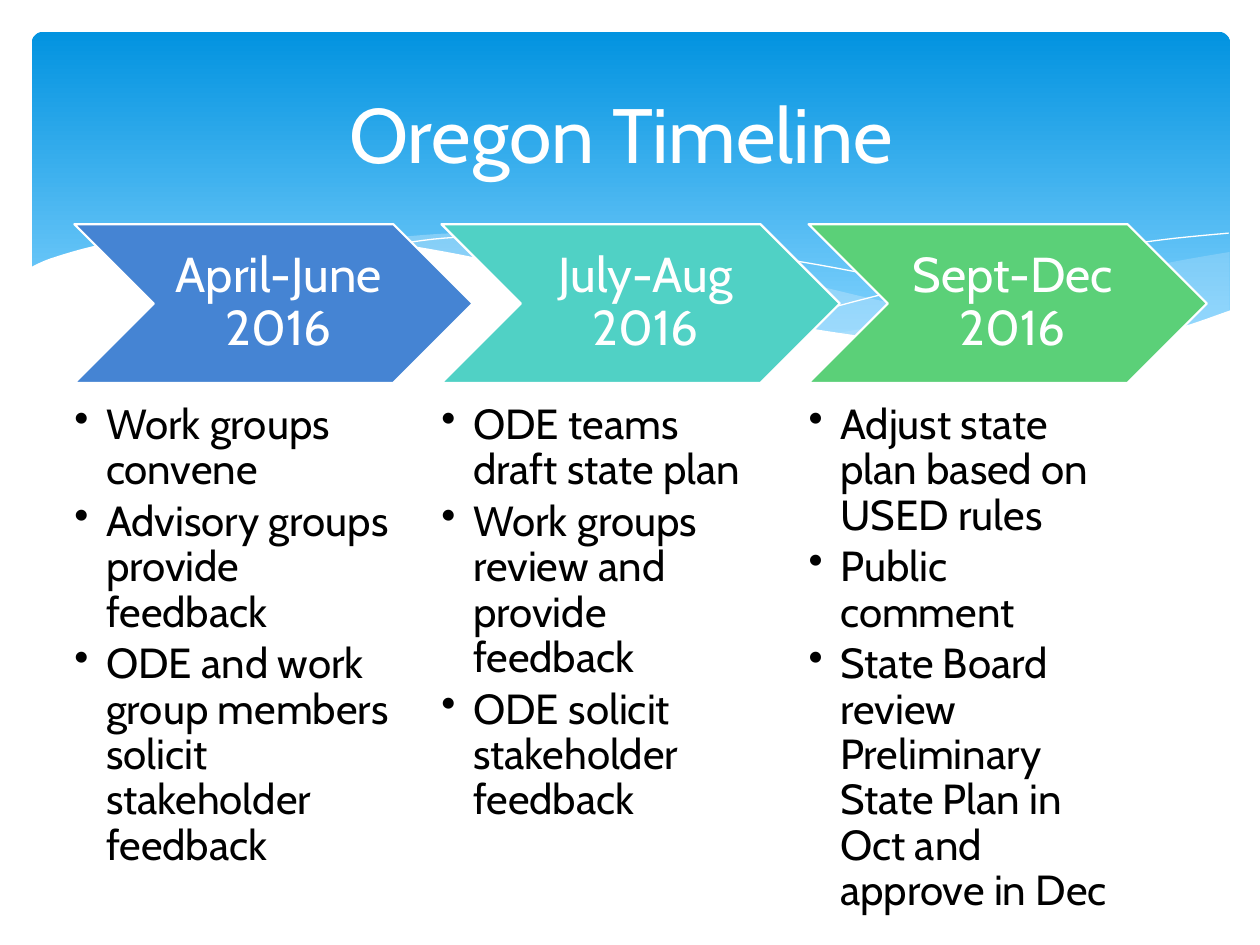
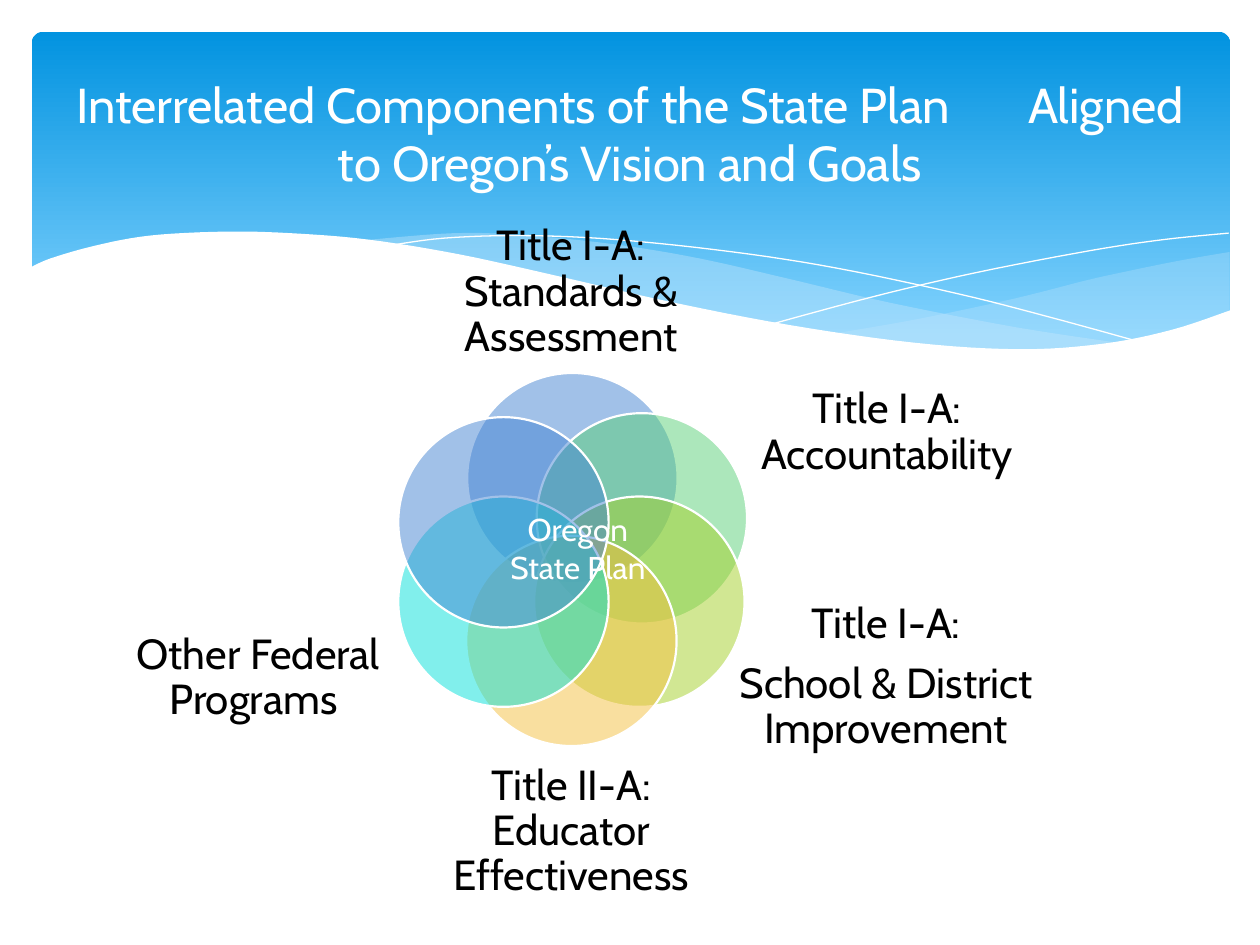
from pptx import Presentation
from pptx.dml.color import RGBColor
from pptx.enum.shapes import MSO_SHAPE
from pptx.enum.text import MSO_ANCHOR, PP_ALIGN
from pptx.oxml.ns import qn
from pptx.util import Cm, Pt
from lxml.etree import SubElement

FONT = "Cabin"
WHITE, BLACK = "FFFFFF", "000000"
SKY_TOP, SKY_BOTTOM, MIST = "0293E0", "83D3FE", "C6E7FC"
BLUE, TEAL, GREEN = "4584D3", "50D1C5", "5BD078"
LIME, AMBER, AQUA = "A5D028", "F5C040", "05E0DB"

# Wave knots in cm; each wave is a smooth curve through them.
SWELL_TOP = [(24.79, 5.08), (23.75, 5.26), (22.63, 5.49), (21.87, 5.66),
             (20.45, 6.02), (18.52, 6.43), (16.79, 6.73)]
SWELL_BOTTOM = [(16.79, 6.73), (17.91, 6.88), (19.23, 7.01), (20.68, 7.06),
                (21.92, 6.99), (22.99, 6.83), (23.93, 6.58), (24.79, 6.27)]
RIBBON_TOP = [(22.68, 6.93), (20.5, 6.6), (17.93, 6.1), (15.98, 5.64),
              (14.1, 5.21), (12.42, 4.93), (10.67, 4.75), (9.17, 4.7),
              (7.26, 4.85)]
RIBBON_BOTTOM = [(7.26, 4.85), (8.69, 5.05), (10.26, 5.36), (11.4, 5.64),
                 (13.46, 6.1), (15.27, 6.48), (17.27, 6.81), (19, 7.01),
                 (20.5, 7.06), (22.68, 6.93)]
FALLING_LINE = [(7.85, 4.95), (8.97, 4.8), (10.57, 4.75), (12.42, 4.83),
                (14.78, 5.08), (16.89, 5.41), (19.3, 5.92), (21.11, 6.38),
                (23.04, 6.91)]
RISING_LINE = [(15.57, 6.53), (17.65, 5.97), (19.71, 5.49), (22, 5.05),
               (23.47, 4.83), (24.77, 4.7)]
FRONT_WAVE = [(24.82, 6.25), (23.62, 6.65), (22.23, 6.93), (20.55, 7.04),
              (18.44, 6.91), (15.9, 6.55), (13.44, 6.07), (11.35, 5.59),
              (9.27, 5.13), (7.42, 4.83), (5.84, 4.7), (4.5, 4.67),
              (3.02, 4.75), (1.93, 4.95), (1.02, 5.21), (0.58, 5.41)]
FRONT_BASE = [(0.58, 8.36), (24.82, 8.36)]

PHASES = [
    ("April-June 2016", BLUE,
     ["Work groups convene",
      "Advisory groups provide feedback",
      "ODE and work group members solicit stakeholder feedback"]),
    ("July-Aug 2016", TEAL,
     ["ODE teams draft state plan",
      "Work groups review and provide feedback",
      "ODE solicit stakeholder feedback"]),
    ("Sept-Dec 2016", GREEN,
     ["Adjust state plan based on USED rules",
      "Public comment",
      "State Board review Preliminary State Plan in Oct and approve in Dec"]),
]

# Circle corner, colour, label box, label paragraphs
COMPONENTS = [
    ((9.42, 7.52), BLUE, (8.86, 4.45, 5.31, 2.9),
     ["Title I-A: Standards & Assessment"]),
    ((10.82, 8.33), GREEN, (14.66, 7.14, 6.45, 3.18),
     ["Title I-A: Accountability"]),
    ((10.77, 10.01), LIME, (13, 11.89, 9.73, 3.53),
     ["Title I-A:", "School & District Improvement"]),
    ((9.4, 10.8), AMBER, (8.86, 15.32, 5.31, 2.9),
     ["Title II-A: Educator Effectiveness"]),
    ((8.03, 10.01), AQUA, (2.69, 11.91, 5.03, 3.53),
     ["Other Federal Programs "]),
    ((8.03, 8.41), BLUE, None, []),
]


def rgb(code):
    return RGBColor.from_string(code)


def smooth(knots, steps=6):
    """Return points of a Catmull-Rom curve through the knots."""
    ends = [knots[0], *knots, knots[-1]]
    points = [knots[0]]
    for a, b, c, d in zip(ends, ends[1:], ends[2:], ends[3:]):
        for i in range(1, steps + 1):
            t = i / steps
            points.append(tuple(
                (2 * q + (s - p) * t + (2 * p - 5 * q + 4 * s - u) * t ** 2
                 + (3 * q - p - 3 * s + u) * t ** 3) / 2
                for p, q, s, u in zip(a, b, c, d)))
    return points


class Deck:
    def __init__(self):
        self.prs = Presentation()
        self.prs.slide_width, self.prs.slide_height = Cm(25.4), Cm(19.05)
        self.s = None

    def slide(self, title, size):
        self.s = self.prs.slides.add_slide(self.prs.slide_layouts[6])
        self.header()
        return self.text((1.27, 0.94, 22.86, 3.48), [title], size, WHITE,
                         anchor=MSO_ANCHOR.MIDDLE, insets=(0.25, 0.13, 0.25, 0.13))

    def header(self):
        band = self.shape(MSO_SHAPE.ROUNDED_RECTANGLE, (0.64, 0.64, 24.16, 6.86))
        band.adjustments[0] = 0.034
        band.fill.gradient()
        band.fill.gradient_angle = 270
        stops = band.fill.gradient_stops
        for stop, color, position in zip(stops, (SKY_TOP, SKY_BOTTOM), (0, 0.9)):
            stop.color.rgb = rgb(color)
            stop.position = position
        self.wave(smooth(SWELL_TOP) + smooth(SWELL_BOTTOM), MIST, 29)
        self.wave(smooth(RIBBON_TOP) + smooth(RIBBON_BOTTOM), MIST, 40)
        self.wave(smooth(FALLING_LINE))
        self.wave(smooth(RISING_LINE))
        self.wave(smooth(FRONT_WAVE) + FRONT_BASE, WHITE)

    def wave(self, points, fill=None, alpha=100):
        """Draw a filled wave, or a white hairline when there is no fill."""
        start, *rest = [(Cm(x), Cm(y)) for x, y in points]
        builder = self.s.shapes.build_freeform(*start)
        builder.add_line_segments(rest, close=fill is not None)
        sp = builder.convert_to_shape()
        self.paint(sp, fill, alpha, None if fill else WHITE, 0)

    def paint(self, sp, fill=None, alpha=100, line=None, width=1.25):
        sp.shadow.inherit = False
        if fill:
            sp.fill.solid()
            sp.fill.fore_color.rgb = rgb(fill)
            if alpha < 100:
                color = sp._element.spPr.find(qn("a:solidFill"))[0]
                SubElement(color, qn("a:alpha"), val=str(alpha * 1000))
        else:
            sp.fill.background()
        if line:
            sp.line.color.rgb = rgb(line)
            sp.line.width = Pt(width)
        else:
            sp.line.fill.background()

    def shape(self, kind, box, **style):
        sp = self.s.shapes.add_shape(kind, *map(Cm, box))
        self.paint(sp, **style)
        return sp

    def text(self, box, paragraphs, size, color=BLACK, **style):
        sp = self.s.shapes.add_textbox(*map(Cm, box))
        self.fill_frame(sp.text_frame, paragraphs, size, color, **style)
        return sp.text_frame

    def fill_frame(self, tf, paragraphs, size, color, anchor=MSO_ANCHOR.TOP,
                   insets=(0, 0, 0, 0), spacing=1, after=0, bullet=False):
        """Fill a frame; a paragraph is a string or a list of run strings."""
        tf.word_wrap = True
        tf.vertical_anchor = anchor
        (tf.margin_left, tf.margin_top,
         tf.margin_right, tf.margin_bottom) = map(Cm, insets)
        for i, runs in enumerate(paragraphs):
            p = tf.add_paragraph() if i else tf.paragraphs[0]
            p.alignment = PP_ALIGN.LEFT if bullet else PP_ALIGN.CENTER
            p.line_spacing = spacing
            p.space_after = Pt(size * after)
            if bullet:
                pPr = p._p.get_or_add_pPr()
                pPr.set("marL", str(Cm(0.64)))
                pPr.set("indent", str(Cm(-0.64)))
                SubElement(pPr, qn("a:buChar"), char="•")
            for words in [runs] if isinstance(runs, str) else runs:
                r = p.add_run()
                r.text = words
                r.font.name, r.font.size = FONT, Pt(size)
                r.font.color.rgb = rgb(color)


def timeline(deck):
    deck.slide("Oregon Timeline ", 44)
    for i, (period, color, tasks) in enumerate(PHASES):
        left = 1.5 + 7.4 * i
        chevron = deck.shape(MSO_SHAPE.CHEVRON, (left, 4.52, 8.03, 3.2),
                             fill=color, line=WHITE)
        deck.fill_frame(chevron.text_frame, [period], 28, WHITE, spacing=0.9,
                        anchor=MSO_ANCHOR.MIDDLE, insets=(0.3, 0.1, 0.1, 0.1))
        deck.text((left, 8.13, 6.4, 9.65), tasks, 24, spacing=0.9,
                  after=0.15, bullet=True)


def components(deck):
    tf = deck.slide(["Interrelated Components of the State Plan", " ",
                     "Aligned to Oregon’s Vision and Goals"], 28)
    gap = tf.paragraphs[0].runs[1]
    gap.font._element.set("spc", "3850")  # widens the single space
    for corner, color, box, label in COMPONENTS:
        deck.shape(MSO_SHAPE.OVAL, (*corner, 4.24, 4.24),
                   fill=color, alpha=50, line=WHITE)
        if box:
            deck.text(box, label, 24, anchor=MSO_ANCHOR.MIDDLE,
                      spacing=0.9, after=0.35)
    deck.text((9.96, 10.16, 3.38, 1.8), ["Oregon State Plan"], 18, WHITE,
              insets=(0.25, 0.13, 0.25, 0.13))


def main():
    deck = Deck()
    timeline(deck)
    components(deck)
    deck.prs.save("out.pptx")


if __name__ == "__main__":
    main()
